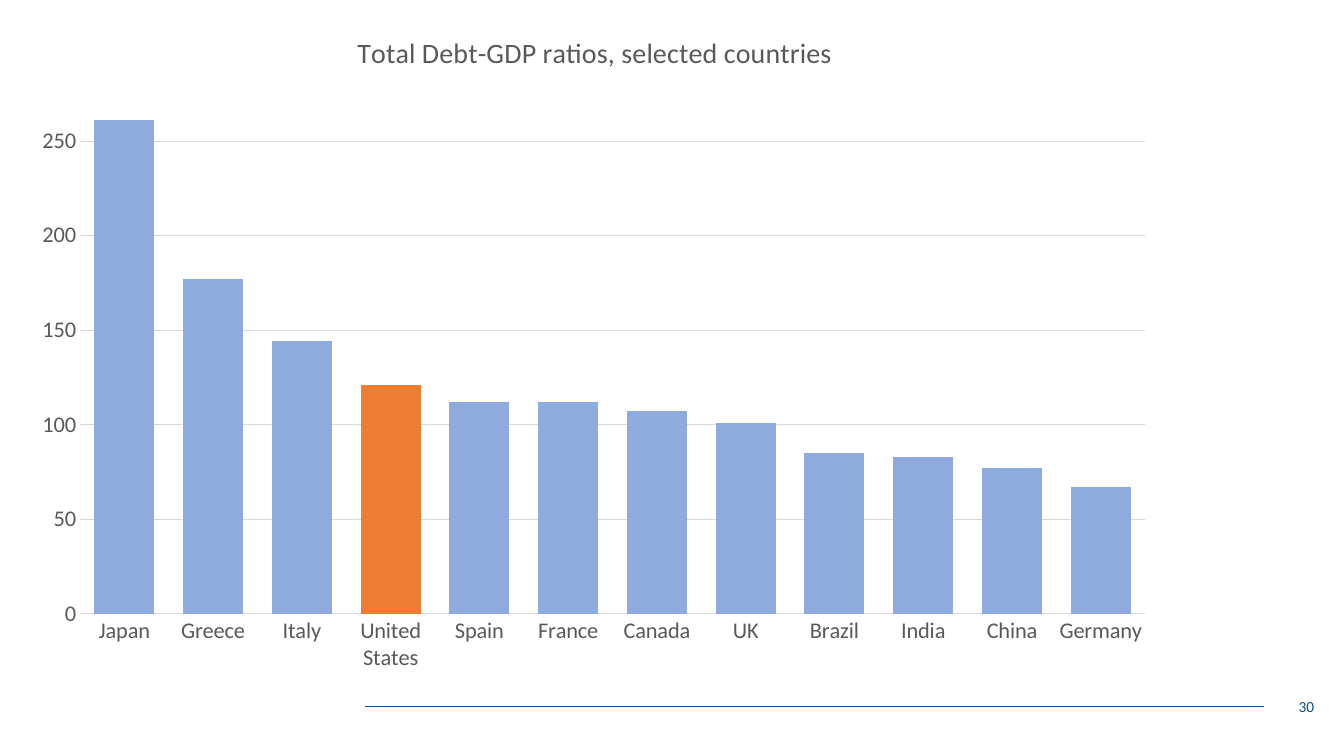
from dataclasses import dataclass

from lxml import etree
from pptx import Presentation
from pptx import util as u
from pptx.chart.data import CategoryChartData
from pptx.dml.color import RGBColor
from pptx.enum import chart as charts, shapes, text
from pptx.oxml import parse_xml
from pptx.oxml.ns import nsdecls, qn


@dataclass(frozen=True)
class Theme:
    font: str = "Calibri"
    ink: RGBColor = RGBColor(0x59, 0x59, 0x59)
    grid: RGBColor = RGBColor(0xD9, 0xD9, 0xD9)
    bar: RGBColor = RGBColor(0x8F, 0xAA, 0xDC)
    highlight: RGBColor = RGBColor(0xED, 0x7D, 0x31)
    footer: RGBColor = RGBColor(0x0C, 0x4C, 0x88)
    title_size: u.Pt = u.Pt(20)
    axis_size: u.Pt = u.Pt(16)
    number_size: u.Pt = u.Pt(11)


THEME = Theme()
HIGHLIGHTED = "United States"
DEBT_RATIOS = {
    "Japan": 261, "Greece": 177, "Italy": 144, HIGHLIGHTED: 121,
    "Spain": 112, "France": 112, "Canada": 107, "UK": 101,
    "Brazil": 85, "India": 83, "China": 77, "Germany": 67,
}


def style_font(font, size, color):
    font.name, font.size, font.bold = THEME.font, size, False
    font.color.rgb = color


def set_fill(part, color):
    part.format.fill.solid()
    part.format.fill.fore_color.rgb = color


def set_layout(parent, index, inner=False, **fractions):
    """Fix a chart part at x, y, w, h, given as fractions of the chart."""
    for layout in parent.findall(qn("c:layout")):
        parent.remove(layout)
    target = '<c:layoutTarget val="inner"/>' if inner else ""
    modes = "".join(f'<c:{key}Mode val="edge"/>' for key in "xy")
    values = "".join(f'<c:{key} val="{val}"/>' for key, val in fractions.items())
    parent.insert(index, parse_xml(
        f'<c:layout {nsdecls("c")}><c:manualLayout>{target}{modes}{values}'
        "</c:manualLayout></c:layout>"))


def style_axes(chart):
    for axis in (chart.category_axis, chart.value_axis):
        axis.major_tick_mark = axis.minor_tick_mark = charts.XL_TICK_MARK.NONE
        style_font(axis.tick_labels.font, THEME.axis_size, THEME.ink)
    values = chart.value_axis
    values.minimum_scale, values.maximum_scale, values.major_unit = 0, 280, 50
    values.format.line.fill.background()
    values.has_major_gridlines = True
    for part in (chart.category_axis, values.major_gridlines):
        part.format.line.color.rgb = THEME.grid
        part.format.line.width = u.Pt(0.75)


def add_debt_chart(page, left, top, width, height):
    data = CategoryChartData(number_format="0")
    data.categories = list(DEBT_RATIOS)
    data.add_series("Series 1", list(DEBT_RATIOS.values()))
    chart = page.shapes.add_chart(
        charts.XL_CHART_TYPE.COLUMN_CLUSTERED, left, top, width, height, data).chart
    chart.has_legend = False
    style_font(chart.font, THEME.axis_size, THEME.ink)
    style_axes(chart)

    chart.has_title = True
    title = chart.chart_title
    para = title.text_frame.paragraphs[0]
    para.text = "Total Debt-GDP ratios, selected countries"
    style_font(para.font, THEME.title_size, THEME.ink)
    title.include_in_layout = False
    set_layout(title._element, 1, x=0.29, y=0.04)

    plot = chart.plots[0]
    plot.gap_width, plot.overlap, plot.vary_by_categories = 48, -27, False
    series = plot.series[0]
    set_fill(series, THEME.bar)
    set_fill(series.points[list(DEBT_RATIOS).index(HIGHLIGHTED)], THEME.highlight)
    plot_area = chart._chartSpace.find(".//" + qn("c:plotArea"))
    set_layout(plot_area, 0, inner=True, x=0.053, y=0.123, w=0.927, h=0.771)


def add_footer(page, left, top, width, height):
    """Draw the rule and, right-aligned in the box, the page number."""
    middle = top + height // 2
    rule = page.shapes.add_connector(
        shapes.MSO_CONNECTOR.STRAIGHT, left, middle, left + width - u.Cm(1.52), middle)
    rule.line.color.rgb = THEME.footer
    rule.line.width = u.Pt(0.5)
    etree.SubElement(rule._element.spPr, qn("a:effectLst"))

    number_width = u.Cm(7.62)
    box = page.shapes.add_textbox(
        left + width - number_width, top, number_width, height)
    frame = box.text_frame
    frame.word_wrap = True
    frame.vertical_anchor = text.MSO_ANCHOR.MIDDLE
    para = frame.paragraphs[0]
    para.text = "30"
    para.alignment = text.PP_ALIGN.RIGHT
    style_font(para.font, THEME.number_size, THEME.footer)


def main():
    deck = Presentation()
    deck.slide_width, deck.slide_height = u.Cm(33.87), u.Cm(19.05)
    page = deck.slides.add_slide(deck.slide_layouts[6])
    add_footer(page, u.Cm(9.19), u.Cm(17.3), u.Cm(24.18), u.Cm(1.02))
    add_debt_chart(page, u.Cm(0.48), u.Cm(0), u.Cm(28.96), u.Cm(17.3))
    deck.save("out.pptx")


if __name__ == "__main__":
    main()
